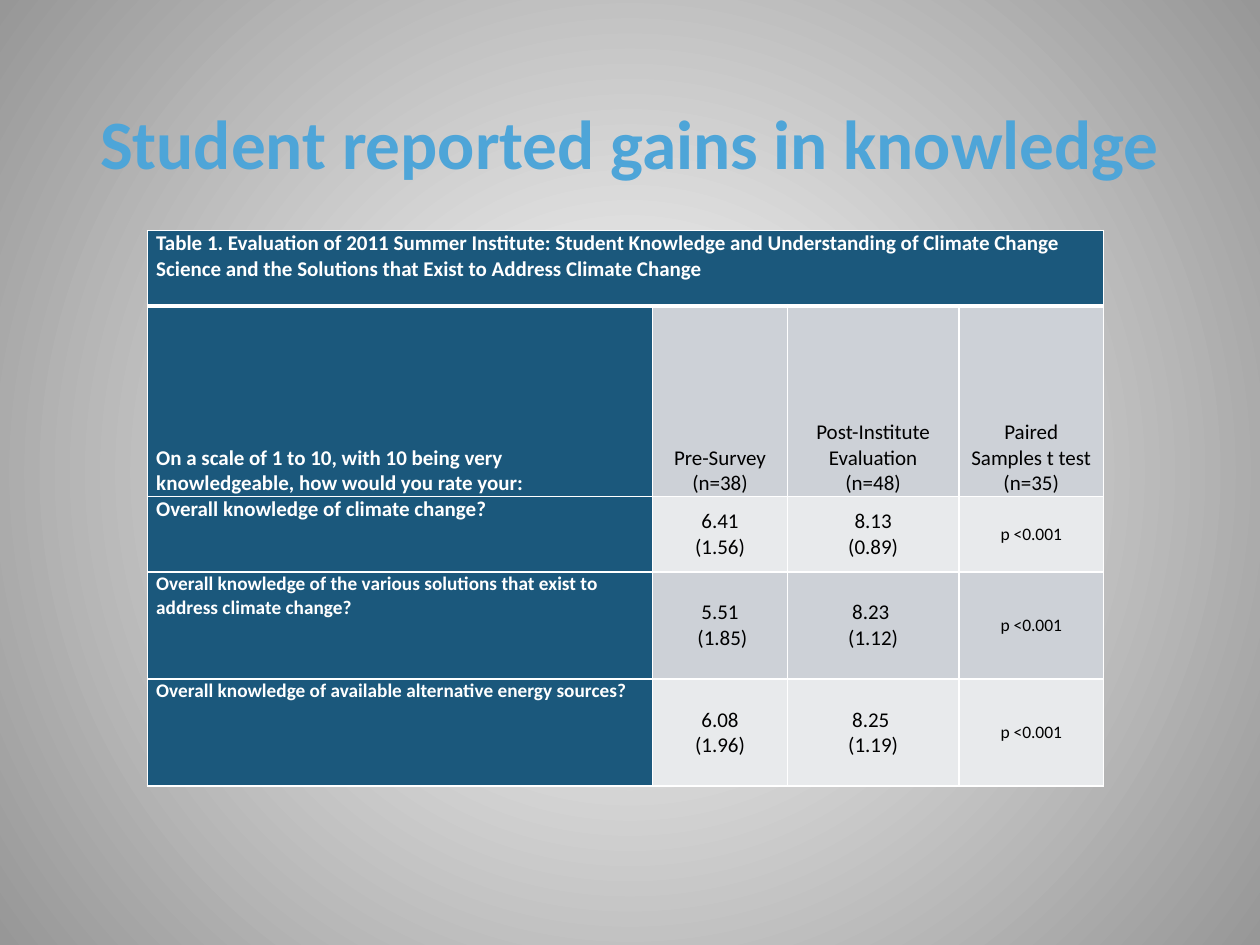
from dataclasses import dataclass

from lxml.etree import SubElement
from pptx import Presentation
from pptx.dml.color import RGBColor
from pptx.enum.text import MSO_ANCHOR as Anchor, PP_ALIGN as Align
from pptx.oxml.ns import qn
from pptx.util import Inches, Pt

NAVY, WHITE, BLACK, SKY = "1B587C", "FFFFFF", "000000", "4EA5D8"
BANDS = ("CDD1D7", "E8EAEC")
COLUMN_WIDTHS = (4.01, 1.07, 1.36, 1.15)
ROW_HEIGHTS = (0.6, 1.51, 0.6, 0.85, 0.85)
MARGINS = {
    "margin_left": Inches(0.07),
    "margin_right": Inches(0.07),
    "margin_top": 0,
    "margin_bottom": 0,
}


@dataclass
class Style:
    size: float
    color: str
    bold: bool
    align: Align


@dataclass
class SurveyRow:
    label: str
    values: tuple
    label_size: float = 12
    last_size: float = 10
    label_anchor: Anchor = Anchor.TOP
    value_anchor: Anchor = Anchor.MIDDLE


CAPTION = (
    "Table 1. Evaluation of 2011 Summer Institute: Student Knowledge and Understanding "
    "of Climate Change Science and the Solutions that Exist to Address Climate Change"
)
SURVEY_ROWS = (
    SurveyRow(
        "On a scale of 1 to 10, with 10 being very knowledgeable, how would you rate your:",
        ("Pre-Survey\n(n=38)", "Post-Institute Evaluation\n(n=48)", "Paired Samples t test\n(n=35)"),
        last_size=12,
        label_anchor=Anchor.BOTTOM,
        value_anchor=Anchor.BOTTOM,
    ),
    SurveyRow("Overall knowledge of climate change?", ("6.41\n(1.56)", "8.13\n(0.89)", "p <0.001")),
    SurveyRow(
        "Overall knowledge of the various solutions that exist to address climate change?",
        ("5.51\n (1.85)", "8.23 \n(1.12)", "p <0.001"),
        label_size=11,
    ),
    SurveyRow(
        "Overall knowledge of available alternative energy sources?",
        ("6.08\n(1.96)", "8.25 \n(1.19)", "p <0.001"),
        label_size=11,
    ),
)


def rgb(color: str) -> RGBColor:
    return RGBColor.from_string(color)


def write(frame, text: str, style: Style) -> None:
    for index, line in enumerate(text.split("\n")):
        para = frame.add_paragraph() if index else frame.paragraphs[0]
        para.alignment = style.align
        span = para.add_run()
        span.text = line
        span.font.color.rgb = rgb(style.color)
        formats = {"name": "Calibri", "size": Pt(style.size), "bold": style.bold}
        for name, value in formats.items():
            setattr(span.font, name, value)


def draw_border(cell, side: str, width: float) -> None:
    properties = cell._tc.get_or_add_tcPr()
    line = SubElement(properties, qn(f"a:ln{side}"), w=str(Pt(width)))
    SubElement(SubElement(line, qn("a:solidFill")), qn("a:srgbClr"), val=WHITE)


def format_cell(cell, fill: str, anchor: Anchor, top: float = 1, bottom: float = 1) -> None:
    for name, value in MARGINS.items():
        setattr(cell, name, value)
    cell.vertical_anchor = anchor
    for side, width in {"L": 1, "R": 1, "T": top, "B": bottom}.items():
        draw_border(cell, side, width)
    cell.fill.solid()
    cell.fill.fore_color.rgb = rgb(fill)


def paint_background(page) -> None:
    page.background.fill.gradient()
    for stop, color, position in zip(page.background.fill.gradient_stops, (WHITE, "979797"), (0, 1)):
        stop.color.rgb = rgb(color)
        stop.position = position
    gradient = page.element.find(".//" + qn("a:gradFill"))
    gradient.remove(gradient.find(qn("a:lin")))
    circle = SubElement(gradient, qn("a:path"), path="circle")
    SubElement(circle, qn("a:fillToRect"), l="50000", t="50000", r="50000", b="50000")


def add_title(page) -> None:
    box = page.shapes.add_textbox(Inches(0.5), Inches(0.5), Inches(9), Inches(1.25))
    box.text_frame.word_wrap = True
    box.text_frame.vertical_anchor = Anchor.MIDDLE
    write(box.text_frame, "Student reported gains in knowledge", Style(39.6, SKY, True, Align.CENTER))


def add_survey_table(page) -> None:
    frame = page.shapes.add_table(
        len(ROW_HEIGHTS), len(COLUMN_WIDTHS), Inches(1.17), Inches(1.83),
        Inches(sum(COLUMN_WIDTHS)), Inches(sum(ROW_HEIGHTS)),
    )
    table = frame.table
    table.first_row = table.horz_banding = False
    for column, width in zip(table.columns, COLUMN_WIDTHS):
        column.width = Inches(width)
    for row, height in zip(table.rows, ROW_HEIGHTS):
        row.height = Inches(height)

    for cell in table.rows[0].cells:
        format_cell(cell, NAVY, Anchor.TOP, bottom=3)
    table.cell(0, 0).merge(table.cell(0, len(COLUMN_WIDTHS) - 1))
    write(table.cell(0, 0).text_frame, CAPTION, Style(12, WHITE, True, Align.LEFT))

    for index, survey in enumerate(SURVEY_ROWS):
        label, *cells = table.rows[index + 1].cells
        top = 1 if index else 3
        format_cell(label, NAVY, survey.label_anchor, top)
        write(label.text_frame, survey.label, Style(survey.label_size, WHITE, True, Align.LEFT))
        sizes = (12, 12, survey.last_size)
        for cell, text, size in zip(cells, survey.values, sizes):
            format_cell(cell, BANDS[index % 2], survey.value_anchor, top)
            write(cell.text_frame, text, Style(size, BLACK, False, Align.CENTER))


def main() -> None:
    """Build the slide with the survey results table."""
    deck = Presentation()
    deck.slide_width, deck.slide_height = Inches(10), Inches(7.5)
    page = deck.slides.add_slide(deck.slide_layouts[6])
    paint_background(page)
    add_title(page)
    add_survey_table(page)
    deck.save("out.pptx")


if __name__ == "__main__":
    main()
